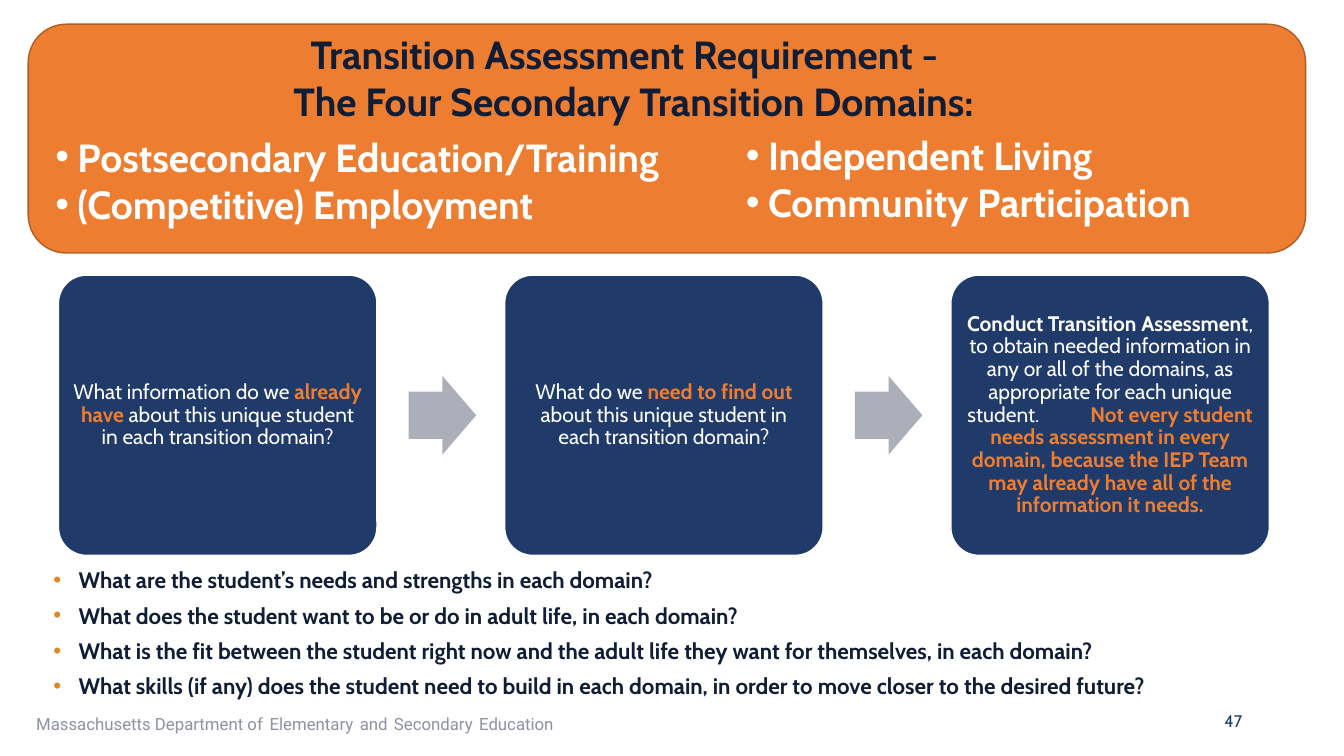
from lxml import etree
from pptx import Presentation
from pptx import util as u
from pptx.dml.color import RGBColor
from pptx.enum import shapes, text
from pptx.oxml.ns import qn

NAVY = RGBColor(0x20, 0x3B, 0x6A)
INK = RGBColor(0x10, 0x1D, 0x35)
ORANGE = RGBColor(0xED, 0x7D, 0x31)
RUST = RGBColor(0xAF, 0x5C, 0x24)
AMBER = RGBColor(0xE3, 0x85, 0x26)
GRAY = RGBColor(0x8D, 0x92, 0xA1)
SILVER = RGBColor(0xAC, 0xAF, 0xB9)
WHITE = RGBColor(0xFF, 0xFF, 0xFF)
WIDE, HIGH = u.Inches(13.33), u.Inches(7.5)


class Deck:
    """Draws on one slide, with lengths as percent of its width and height."""

    font = "Cabin"

    def __init__(self):
        self.prs = Presentation()
        self.prs.slide_width, self.prs.slide_height = WIDE, HIGH
        self.slide = self.prs.slides.add_slide(self.prs.slide_layouts[6])

    def place(self, box):
        return [int(part * side / 100) for part, side in zip(box, (WIDE, HIGH) * 2)]

    def shape(self, kind, box, fill, line=None, adjust=()):
        item = self.slide.shapes.add_shape(kind, *self.place(box))
        item.shadow.inherit = False
        item.fill.solid()
        item.fill.fore_color.rgb = fill
        if line is None:
            item.line.fill.background()
        else:
            item.line.color.rgb = line
            item.line.width = u.Pt(1)
        for spot, value in enumerate(adjust):
            item.adjustments[spot] = value
        return item

    def area(self, box, anchor=text.MSO_ANCHOR.TOP):
        frame = self.slide.shapes.add_textbox(*self.place(box)).text_frame
        frame.word_wrap = True
        frame.vertical_anchor = anchor
        return frame

    def para(self, frame, align=text.PP_ALIGN.LEFT):
        first = frame.paragraphs[0]
        para = frame.add_paragraph() if first.runs else first
        para.alignment = align
        return para

    def run(self, para, words, size, color, bold=False, font=None):
        run = para.add_run()
        run.text = words
        run.font.name = font or self.font
        run.font.size = u.Pt(size)
        run.font.bold = bold
        run.font.color.rgb = color

    def bullets(self, box, lines, size, color, dot, indent, gap=0):
        frame = self.area(box)
        for row, line in enumerate(lines):
            para = self.para(frame)
            if row:
                para.space_before = u.Pt(gap)
            props = para._p.get_or_add_pPr()
            props.set("marL", str(u.Inches(indent)))
            props.set("indent", str(-u.Inches(indent)))
            tint = etree.SubElement(props, qn("a:buClr"))
            etree.SubElement(tint, qn("a:srgbClr"), val=str(dot))
            etree.SubElement(props, qn("a:buFont"), typeface="Arial")
            etree.SubElement(props, qn("a:buChar"), char="•")
            self.run(para, line, size, color, True)

    def card(self, box, parts):
        item = self.shape(shapes.MSO_SHAPE.ROUNDED_RECTANGLE, box, NAVY, WHITE, [0.1])
        frame = item.text_frame
        frame.word_wrap = True
        frame.vertical_anchor = text.MSO_ANCHOR.MIDDLE
        frame.margin_left = frame.margin_right = u.Inches(0.06)
        frame.margin_top = frame.margin_bottom = u.Inches(0.06)
        para = self.para(frame, text.PP_ALIGN.CENTER)
        para.line_spacing = 0.9
        tabs = etree.SubElement(para._p.get_or_add_pPr(), qn("a:tabLst"))
        etree.SubElement(tabs, qn("a:tab"), pos=str(u.Inches(1.22)), algn="l")
        for words, color, bold in parts:
            self.run(para, words, 15, color, bold)

    def arrow(self, box):
        self.shape(shapes.MSO_SHAPE.RIGHT_ARROW, box, SILVER, adjust=[0.6, 0.5])

    def title(self, box, lines):
        frame = self.area(box)
        for line, inset in lines:
            para = self.para(frame, text.PP_ALIGN.CENTER)
            para._p.get_or_add_pPr().set("marR", str(u.Inches(inset)))
            self.run(para, line, 28, INK, True)

    def footer(self, box, words):
        para = self.para(self.area(box))
        for spot, word in enumerate(words):
            if spot:
                self.run(para, " ", 18, NAVY, font="Roboto")
            self.run(para, word, 12, GRAY, font="Roboto")

    def number(self, box, words):
        frame = self.area(box, text.MSO_ANCHOR.MIDDLE)
        self.run(self.para(frame, text.PP_ALIGN.RIGHT), words, 12, NAVY)


CARDS = [
    [("What information do we ", WHITE, False),
     ("already have ", ORANGE, True),
     ("about this unique student in each transition domain?", WHITE, False)],
    [("What do we ", WHITE, False),
     ("need to find out ", ORANGE, True),
     ("about this unique student in each transition domain?", WHITE, False)],
    [("Conduct Transition Assessment", WHITE, True),
     (", to obtain needed information in any or all of the domains, "
      "as appropriate for each unique student.\t", WHITE, False),
     ("Not every student needs assessment in every domain, because the "
      "IEP Team may already have all of the information it needs.", ORANGE, True)],
]
DOMAINS = [
    ((3.38, 16.93, 51.16, 13.87),
     ["Postsecondary Education/Training", "(Competitive) Employment"]),
    ((54.76, 16.67, 40.74, 13.87),
     ["Independent Living", "Community Participation"]),
]
ASKS = [
    "What are the student’s needs and strengths in each domain?",
    "What does the student want to be or do in adult life, in each domain?",
    "What is the fit between the student right now and the adult life they "
    "want for themselves, in each domain?",
    "What skills (if any) does the student need to build in each domain, "
    "in order to move closer to the desired future?",
]


def main():
    deck = Deck()
    deck.footer((1.95, 92.67, 63.32, 5.33),
                ["Massachusetts Department of", "Elementary", "and",
                 "Secondary", "Education"])
    deck.shape(shapes.MSO_SHAPE.ROUNDED_RECTANGLE, (2.1, 3.2, 95.05, 30.27),
               ORANGE, RUST)
    for box, lines in DOMAINS:
        deck.bullets(box, lines, 28, WHITE, WHITE, 0.22)
    deck.bullets((3.23, 74.27, 93.25, 19.07), ASKS, 16, INK, AMBER, 0.25, 6)
    step = 33.2
    for col, parts in enumerate(CARDS):
        deck.card((4.35 + col * step, 36.4, 23.7, 37.07), parts)
        if col:
            deck.arrow((30.4 + (col - 1) * step, 49.73, 5.03, 10.4))
    deck.number((70.67, 92.67, 22.5, 5.33), "47")
    deck.title((10.13, 3.33, 73.97, 13.87),
               [("Transition Assessment Requirement -", 0.18),
                ("The Four Secondary Transition Domains:", 0)])
    deck.prs.save("out.pptx")


if __name__ == "__main__":
    main()
